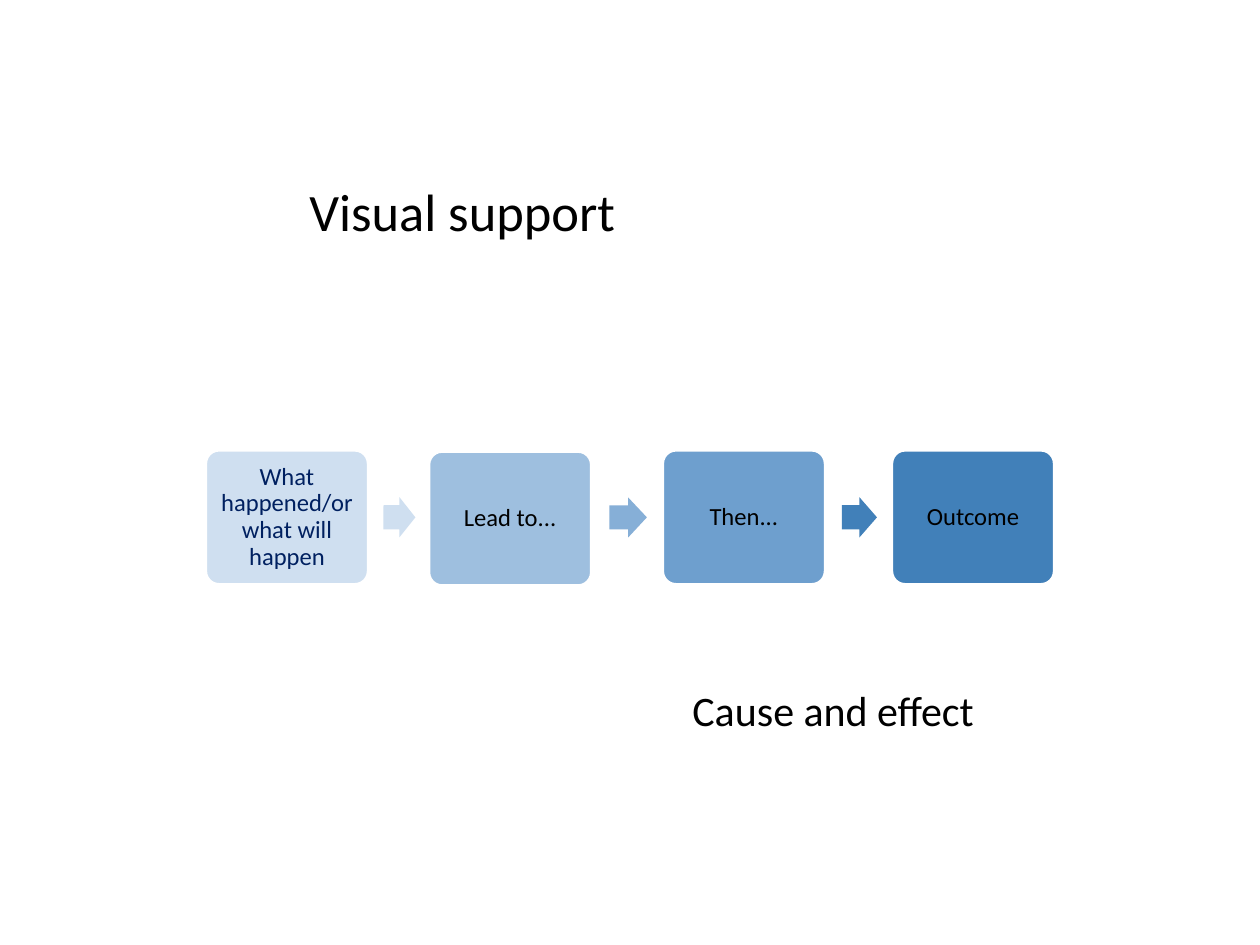
from pptx import Presentation
from pptx.dml.color import RGBColor
from pptx.enum.shapes import MSO_SHAPE
from pptx.enum.text import MSO_ANCHOR, PP_ALIGN
from pptx.util import Inches, Pt

ROUNDED = MSO_SHAPE.ROUNDED_RECTANGLE
ARROW = MSO_SHAPE.RIGHT_ARROW
MIDDLE, TOP = MSO_ANCHOR.MIDDLE, MSO_ANCHOR.TOP
LEFT, CENTER = PP_ALIGN.LEFT, PP_ALIGN.CENTER

FONT = "Calibri"
BLACK, WHITE = "000000", "FFFFFF"
TITLE = "Visual support"
CAPTION = "Cause and effect"
STEPS = [
    ("What happened/or what will happen", 1.74, 3.81, "CFDFF0", "002060"),
    ("Lead to...", 3.63, 3.82, "9EBFDF", BLACK),
    ("Then...", 5.61, 3.81, "6E9FCE", BLACK),
    ("Outcome", 7.55, 3.81, "4180B9", BLACK),
]
ARROWS = [("CFDFF0", 0.2), ("86AFD7", -0.2), ("4180B9", 0)]

STEP_WIDTH, STEP_HEIGHT = 1.38, 1.14
ARROW_TOP, ARROW_HEIGHT = 4.21, 0.34
ARROW_START, ARROW_SHARE = 0.25, 0.53


def rgb(value):
    return RGBColor.from_string(value)


def write(shape, text, size, color, align, anchor, insets, spacing=1.0):
    frame = shape.text_frame
    frame.word_wrap = True
    frame.vertical_anchor = anchor
    (frame.margin_left, frame.margin_top,
     frame.margin_right, frame.margin_bottom) = [Inches(i) for i in insets]
    paragraph = frame.paragraphs[0]
    paragraph.alignment = align
    paragraph.line_spacing = spacing
    run = paragraph.add_run()
    run.text = text
    run.font.name = FONT
    run.font.size = Pt(size)
    run.font.color.rgb = rgb(color)


def add_block(slide, kind, box, fill, adjustments):
    block = slide.shapes.add_shape(kind, *[Inches(v) for v in box])
    block.shadow.inherit = False
    block.fill.solid()
    block.fill.fore_color.rgb = rgb(fill)
    block.line.fill.background()
    for index, value in enumerate(adjustments):
        block.adjustments[index] = value
    return block


def add_label(slide, box, *style):
    label = slide.shapes.add_textbox(*[Inches(v) for v in box])
    write(label, *style)


def main():
    deck = Presentation()
    deck.slide_width, deck.slide_height = Inches(10.67), Inches(8)
    slide = deck.slides.add_slide(deck.slide_layouts[6])

    add_label(slide, (1.73, 1.16, 7.2, 0.97), TITLE, 32, BLACK, LEFT, MIDDLE,
              (0.89, 0.31, 0.79, 0.04))

    for text, left, top, fill, color in STEPS:
        step = add_block(slide, ROUNDED, (left, top, STEP_WIDTH, STEP_HEIGHT),
                         fill, [0.1])
        step.line.color.rgb = rgb(WHITE)
        step.line.width = Pt(2)
        write(step, text, 15, color, CENTER, MIDDLE, [0.06] * 4, 0.9)

    for (fill, turn), before, after in zip(ARROWS, STEPS, STEPS[1:]):
        gap_left = before[1] + STEP_WIDTH
        gap = after[1] - gap_left
        arrow = add_block(slide, ARROW,
                          (gap_left + ARROW_START * gap, ARROW_TOP,
                           ARROW_SHARE * gap, ARROW_HEIGHT), fill, [0.6, 0.5])
        arrow.rotation = turn

    add_label(slide, (5.4, 5.75, 3.31, 0.53), CAPTION, 25.6, BLACK, CENTER, TOP,
              (0.1, 0.05, 0.1, 0.05))

    deck.save("out.pptx")


if __name__ == "__main__":
    main()
